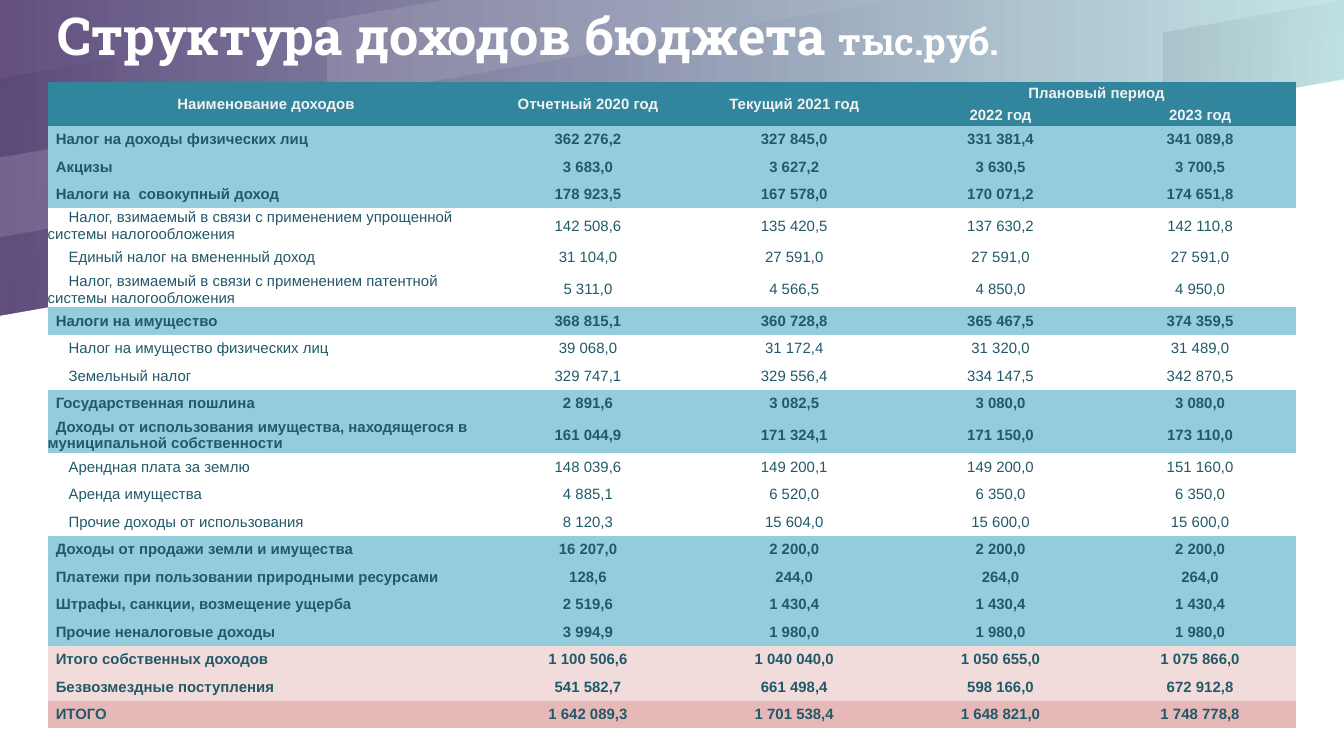
from dataclasses import dataclass

from lxml import etree
from pptx import Presentation
from pptx.dml.color import RGBColor
from pptx.enum.text import MSO_ANCHOR, PP_ALIGN
from pptx.oxml.ns import qn
from pptx.util import Emu, Pt

# 200 px to the inch
EMU_PER_PX = 4572
MIDDLE = MSO_ANCHOR.MIDDLE
CENTER = PP_ALIGN.CENTER
LEFT = PP_ALIGN.LEFT

WHITE = RGBColor(0xFF, 0xFF, 0xFF)
NIGHT = RGBColor(0x00, 0x00, 0x1A)
PURPLE = RGBColor(0x63, 0x50, 0x80)
MINT = RGBColor(0xC4, 0xE6, 0xE6)
TEAL = RGBColor(0x31, 0x85, 0x9C)
LIGHT_TEAL = RGBColor(0x93, 0xCD, 0xDD)
LIGHT_PINK = RGBColor(0xF2, 0xDC, 0xDB)
PINK = RGBColor(0xE6, 0xB9, 0xB8)
HEADER_TEXT = RGBColor(0xF2, 0xF2, 0xF2)
BODY_TEXT = RGBColor(0x21, 0x59, 0x68)

TITLE_FONT, TABLE_FONT = "Roboto Slab", "Arial"
NO_GRID_STYLE = "{2D5ABB26-0587-4C30-8999-92F81FD0307C}"
COLUMN_WIDTHS = [650, 308, 306, 308, 286]
HEADER_HEIGHTS = [33, 32]
ROW_HEIGHT, TALL_ROW_HEIGHT = 41, 51
GROUP_INDENT, ITEM_INDENT = 12, 31


@dataclass
class Band:
    points: list[tuple[int, int]]
    color: RGBColor
    opacity: tuple[int, int]  # percent at each end


@dataclass
class IncomeRow:
    label: str
    values: list[str]
    fill: RGBColor = LIGHT_TEAL
    height: int = ROW_HEIGHT


BANDS = [
    Band([(0, 1125), (2000, 1125), (2000, 118), (0, 470)], WHITE, (100, 100)),
    Band([(664, 0), (488, 30), (488, 148), (1330, 0)], WHITE, (12, 5)),
    Band([(0, 116), (0, 234), (174, 204), (174, 86)], NIGHT, (8, 2)),
    Band([(0, 352), (0, 470), (414, 398), (414, 280)], NIGHT, (2, 8)),
    Band([(2000, 0), (1998, 0), (1732, 48), (1732, 164), (2000, 118)], NIGHT, (8, 2)),
    Band([(0, 234), (0, 352), (586, 248), (586, 132)], WHITE, (12, 5)),
]

# Row, column, last row, last column, text
HEADERS = [
    (0, 0, 1, 0, "Наименование доходов"),
    (0, 1, 1, 1, "Отчетный 2020 год"),
    (0, 2, 1, 2, "Текущий 2021 год"),
    (0, 3, 0, 4, "Плановый период"),
    (1, 3, 1, 3, "2022 год"),
    (1, 4, 1, 4, "2023 год"),
]

INCOME_ROWS = [
    IncomeRow("Налог на доходы физических лиц", ["362 276,2", "327 845,0", "331 381,4", "341 089,8"]),
    IncomeRow("Акцизы", ["3 683,0", "3 627,2", "3 630,5", "3 700,5"]),
    IncomeRow("Налоги на  совокупный доход", ["178 923,5", "167 578,0", "170 071,2", "174 651,8"]),
    IncomeRow("Налог, взимаемый в связи с применением упрощенной системы налогообложения",
              ["142 508,6", "135 420,5", "137 630,2", "142 110,8"], WHITE, TALL_ROW_HEIGHT),
    IncomeRow("Единый налог на вмененный доход", ["31 104,0", "27 591,0", "27 591,0", "27 591,0"], WHITE),
    IncomeRow("Налог, взимаемый в связи с применением патентной системы налогообложения",
              ["5 311,0", "4 566,5", "4 850,0", "4 950,0"], WHITE, TALL_ROW_HEIGHT),
    IncomeRow("Налоги на имущество", ["368 815,1", "360 728,8", "365 467,5", "374 359,5"]),
    IncomeRow("Налог на имущество физических лиц", ["39 068,0", "31 172,4", "31 320,0", "31 489,0"], WHITE),
    IncomeRow("Земельный налог", ["329 747,1", "329 556,4", "334 147,5", "342 870,5"], WHITE),
    IncomeRow("Государственная пошлина", ["2 891,6", "3 082,5", "3 080,0", "3 080,0"]),
    IncomeRow("Доходы от использования имущества, находящегося в муниципальной собственности",
              ["161 044,9", "171 324,1", "171 150,0", "173 110,0"], height=TALL_ROW_HEIGHT),
    IncomeRow("Арендная плата за землю", ["148 039,6", "149 200,1", "149 200,0", "151 160,0"], WHITE),
    IncomeRow("Аренда имущества", ["4 885,1", "6 520,0", "6 350,0", "6 350,0"], WHITE),
    IncomeRow("Прочие доходы от использования", ["8 120,3", "15 604,0", "15 600,0", "15 600,0"], WHITE),
    IncomeRow("Доходы от продажи земли и имущества", ["16 207,0", "2 200,0", "2 200,0", "2 200,0"]),
    IncomeRow("Платежи при пользовании природными ресурсами", ["128,6", "244,0", "264,0", "264,0"]),
    IncomeRow("Штрафы, санкции, возмещение ущерба", ["2 519,6", "1 430,4", "1 430,4", "1 430,4"]),
    IncomeRow("Прочие неналоговые доходы", ["3 994,9", "1 980,0", "1 980,0", "1 980,0"]),
    IncomeRow("Итого собственных доходов",
              ["1 100 506,6", "1 040 040,0", "1 050 655,0", "1 075 866,0"], LIGHT_PINK),
    IncomeRow("Безвозмездные поступления", ["541 582,7", "661 498,4", "598 166,0", "672 912,8"], LIGHT_PINK),
    IncomeRow("ИТОГО", ["1 642 089,3", "1 701 538,4", "1 648 821,0", "1 748 778,8"], PINK),
]


def px(length: int) -> Emu:
    return Emu(length * EMU_PER_PX)


def clear_margins(box) -> None:
    box.margin_left = box.margin_right = box.margin_top = box.margin_bottom = 0


def draw_band(slide, band: Band) -> None:
    builder = slide.shapes.build_freeform(*band.points[0], scale=EMU_PER_PX)
    builder.add_line_segments(band.points[1:], close=True)
    shape = builder.convert_to_shape()
    shape.shadow.inherit = False
    shape.line.fill.background()
    if band.opacity == (100, 100):
        shape.fill.solid()
        shape.fill.fore_color.rgb = band.color
        return
    shape.fill.gradient()
    shape.fill.gradient_angle = 350
    for stop in shape.fill.gradient_stops:
        stop.color.rgb = band.color
    colors = shape.element.spPr.iter(qn("a:srgbClr"))
    for color, percent in zip(colors, band.opacity):
        etree.SubElement(color, qn("a:alpha")).set("val", str(percent * 1000))


def add_text_shadow(run) -> None:
    effects = etree.Element(qn("a:effectLst"))
    shadow = etree.SubElement(effects, qn("a:outerShdw"), blurRad="38100",
                              dist="38100", dir="2700000", algn="tl")
    color = etree.SubElement(shadow, qn("a:srgbClr"), val="000000")
    etree.SubElement(color, qn("a:alpha"), val="43000")
    run.font._element.find(qn("a:solidFill")).addnext(effects)


def draw_title(slide) -> None:
    frame = slide.shapes.add_textbox(px(86), px(12), px(1812), px(78)).text_frame
    frame.word_wrap = True
    frame.vertical_anchor = MIDDLE
    clear_margins(frame)
    for text, size in (("Структура доходов бюджета ", 28), ("тыс.руб.", 20)):
        run = frame.paragraphs[0].add_run()
        run.text = text
        run.font.size = Pt(size)
        run.font.bold = True
        run.font.name = TITLE_FONT
        run.font.color.rgb = WHITE
        add_text_shadow(run)


def fill_cell(cell, text: str, fill: RGBColor, color: RGBColor = BODY_TEXT,
              alignment=CENTER, indent: int = 0) -> None:
    clear_margins(cell)
    cell.vertical_anchor = MIDDLE
    cell.fill.solid()
    cell.fill.fore_color.rgb = fill
    paragraph = cell.text_frame.paragraphs[0]
    paragraph.text = text
    paragraph.alignment = alignment
    if indent:
        paragraph._p.get_or_add_pPr().set("indent", str(px(indent)))
    font = paragraph.runs[0].font
    font.size = Pt(8)
    font.name = TABLE_FONT
    font.bold = fill != WHITE
    font.color.rgb = color


def draw_income_table(slide) -> None:
    heights = HEADER_HEIGHTS + [row.height for row in INCOME_ROWS]
    frame = slide.shapes.add_table(len(heights), len(COLUMN_WIDTHS), px(71), px(122),
                                   px(sum(COLUMN_WIDTHS)), px(sum(heights)))
    table = frame.table
    table.first_row = table.horz_banding = False
    next(frame.element.iter(qn("a:tableStyleId"))).text = NO_GRID_STYLE
    for column, width in zip(table.columns, COLUMN_WIDTHS):
        column.width = px(width)
    for table_row, height in zip(table.rows, heights):
        table_row.height = px(height)

    # Header cells
    for top, left, bottom, right, text in HEADERS:
        cell = table.cell(top, left)
        if (top, left) != (bottom, right):
            cell.merge(table.cell(bottom, right))
        fill_cell(cell, text, TEAL, HEADER_TEXT)

    # Income lines
    for index, row in enumerate(INCOME_ROWS, len(HEADER_HEIGHTS)):
        indent = ITEM_INDENT if row.fill == WHITE else GROUP_INDENT
        fill_cell(table.cell(index, 0), row.label, row.fill, alignment=LEFT, indent=indent)
        for column, value in enumerate(row.values, 1):
            fill_cell(table.cell(index, column), value, row.fill)


def main() -> None:
    presentation = Presentation()
    presentation.slide_width, presentation.slide_height = px(2000), px(1125)
    slide = presentation.slides.add_slide(presentation.slide_layouts[6])

    # Background
    background = slide.background.fill
    background.gradient()
    background.gradient_angle = 0
    for stop, color in zip(background.gradient_stops, (PURPLE, MINT)):
        stop.color.rgb = color
    for band in BANDS:
        draw_band(slide, band)

    # Content
    draw_title(slide)
    draw_income_table(slide)
    presentation.save("out.pptx")


if __name__ == "__main__":
    main()
